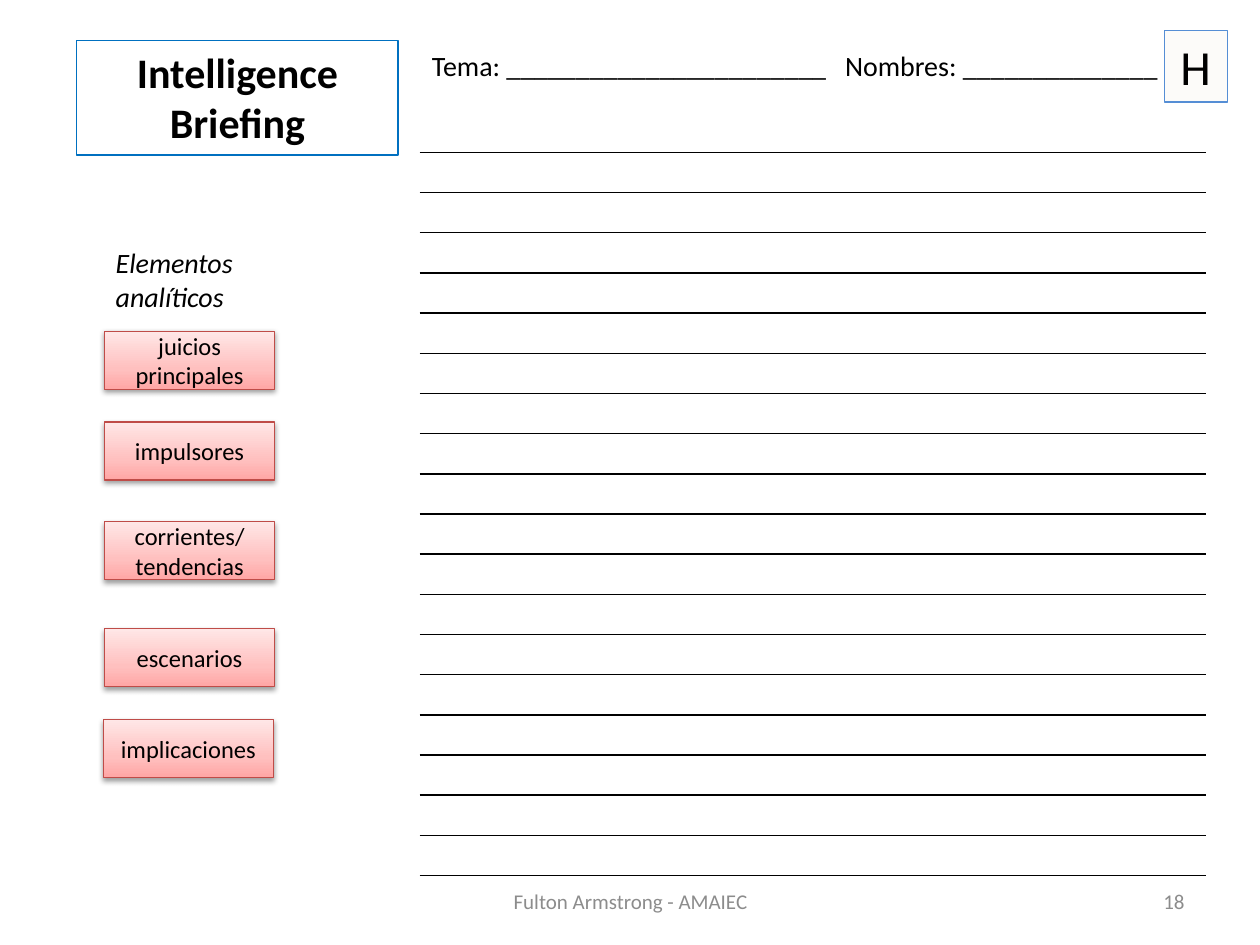
from lxml.etree import SubElement
from pptx import Presentation
from pptx.dml.color import RGBColor
from pptx.enum.shapes import MSO_SHAPE
from pptx.enum.text import MSO_ANCHOR, PP_ALIGN
from pptx.oxml.ns import qn
from pptx.util import Inches, Pt

# Boxes are (left, top, width, height) on a grid of 100 columns by 75 rows.
UNIT = Inches(0.1)
COLUMNS, ROWS = 100, 75
FONT = "Calibri"
COLORS = {
    "ink": "000000", "paper": "FFFFFF", "title_edge": "0070C0",
    "badge": "FCFBF9", "badge_edge": "558ED5", "footer": "8C8C8C",
    "chip_edge": "BF4C48", "chip_low": "FFA6A5", "chip_mid": "FFC0BF",
    "chip_high": "FFE7E7",
}
CHIP_STOPS = ((0, "chip_low"), (35, "chip_mid"), (100, "chip_high"))
ELEMENTS = (
    (0, 7.3, "juicios principales"),
    (0, 14.5, "impulsores"),
    (0, 22.4, "corrientes/ tendencias"),
    (0, 30.9, "escenarios"),
    (-0.1, 38.1, "implicaciones"),
)


def rgb(name):
    return RGBColor.from_string(COLORS[name])


def grid(*units):
    return [round(unit * UNIT) for unit in units]


def write(shape, text, size, align=PP_ALIGN.LEFT, anchor=MSO_ANCHOR.TOP,
          color="ink", bold=False, italic=False, wrap=True):
    frame = shape.text_frame
    frame.text = text
    frame.word_wrap = wrap
    frame.vertical_anchor = anchor
    for paragraph in frame.paragraphs:
        paragraph.alignment = align
        for run in paragraph.runs:
            font = run.font
            font.name, font.size = FONT, Pt(size)
            font.bold, font.italic = bold, italic
            font.color.rgb = rgb(color)


def add_label(slide, box, text, size, **style):
    label = slide.shapes.add_textbox(*grid(*box))
    write(label, text, size, **style)
    return label


def add_box(slide, box, edge, fill=None):
    rectangle = slide.shapes.add_shape(MSO_SHAPE.RECTANGLE, *grid(*box))
    rectangle.shadow.inherit = False
    rectangle.line.color.rgb = rgb(edge)
    rectangle.line.width = Pt(0.75)
    if fill:
        rectangle.fill.solid()
        rectangle.fill.fore_color.rgb = rgb(fill)
    else:
        rectangle.fill.background()
    return rectangle


def add_color(parent, name):
    return SubElement(parent, qn("a:srgbClr"), val=COLORS[name])


def shade_chip(chip):
    """Give the chip its three-stop gradient and soft drop shadow."""
    chip.fill.gradient()
    chip.fill.gradient_angle = 90
    properties = chip._element.spPr
    stops = properties.find(qn("a:gradFill")).find(qn("a:gsLst"))
    for stop in list(stops):
        stops.remove(stop)
    for percent, name in CHIP_STOPS:
        add_color(SubElement(stops, qn("a:gs"), pos=str(percent * 1000)), name)
    shadow = SubElement(
        properties.find(qn("a:effectLst")), qn("a:outerShdw"),
        blurRad=str(Pt(3.1)), dist=str(Pt(1.6)), dir="5400000", rotWithShape="0")
    SubElement(add_color(shadow, "ink"), qn("a:alpha"), val="38000")


def add_title(slide, box):
    write(add_box(slide, box, "title_edge"), "Intelligence Briefing", 24,
          align=PP_ALIGN.CENTER, bold=True)


def add_header(slide, box):
    """Place the two fill-in fields and the letter badge."""
    left, top, width, height = box
    fields = add_label(
        slide, (left, top + 1, width - 3.6, 3.7),
        "Tema: _______________________\tNombres: ______________", 16, wrap=False)
    properties = fields.text_frame.paragraphs[0]._p.get_or_add_pPr()
    tabs = SubElement(properties, qn("a:tabLst"))
    SubElement(tabs, qn("a:tab"), pos=str(grid(32.8)[0]), algn="l")
    badge = add_box(slide, (left + width - 5, top, 5, height), "badge_edge", "badge")
    write(badge, "H", 28, align=PP_ALIGN.CENTER)


def add_elements(slide, box):
    """Place the heading and the chips of the analytic elements."""
    left, top, width, _ = box
    add_label(slide, (left, top, 11.4, 6.4), "Elementos\vanalíticos", 16,
              italic=True, wrap=False)
    for shift, drop, name in ELEMENTS:
        chip = add_box(slide, (left + 0.1 + shift, top + drop, width, 4.6), "chip_edge")
        shade_chip(chip)
        write(chip, name, 14, align=PP_ALIGN.CENTER, anchor=MSO_ANCHOR.MIDDLE)


def rule_cell(cell, top, bottom):
    properties = cell._tc.get_or_add_tcPr()
    for side in ("a:lnL", "a:lnR"):
        SubElement(SubElement(properties, qn(side), w="0"), qn("a:noFill"))
    for side, name in (("a:lnT", top), ("a:lnB", bottom)):
        line = SubElement(properties, qn(side), w=str(Pt(1)))
        add_color(SubElement(line, qn("a:solidFill")), name)
    cell.fill.background()


def add_writing_lines(slide, box, count=20):
    table = slide.shapes.add_table(count, 1, *grid(*box)).table
    table.first_row = table.horz_banding = False
    for index, row in enumerate(table.rows):
        row.height = grid(box[3] / count)[0]
        cell = row.cells[0]
        rule_cell(cell, "paper" if index == 0 else "ink",
                  "paper" if index == count - 1 else "ink")
        # Small empty text keeps the row from growing.
        SubElement(cell.text_frame.paragraphs[0]._p, qn("a:endParaRPr"), sz="1000")


def add_footer(slide, box):
    left, top, width, height = box
    style = {"color": "footer", "anchor": MSO_ANCHOR.MIDDLE}
    add_label(slide, (left, top, 31.7, height), "Fulton Armstrong - AMAIEC", 12,
              align=PP_ALIGN.CENTER, **style)
    add_label(slide, (left + width - 23.3, top, 23.3, height), "18", 12,
              align=PP_ALIGN.RIGHT, **style)


def main():
    deck = Presentation()
    deck.slide_width, deck.slide_height = grid(COLUMNS, ROWS)
    slide = deck.slides.add_slide(deck.slide_layouts[6])
    add_writing_lines(slide, (33.3, 8.9, 62.4, 63.8))
    add_title(slide, (6.1, 3.2, 25.5, 9.1))
    add_header(slide, (33.3, 2.4, 64.1, 5.7))
    add_elements(slide, (8.2, 19, 13.5, 42.7))
    add_footer(slide, (34.2, 69.5, 60.8, 4))
    deck.save("out.pptx")


if __name__ == "__main__":
    main()
